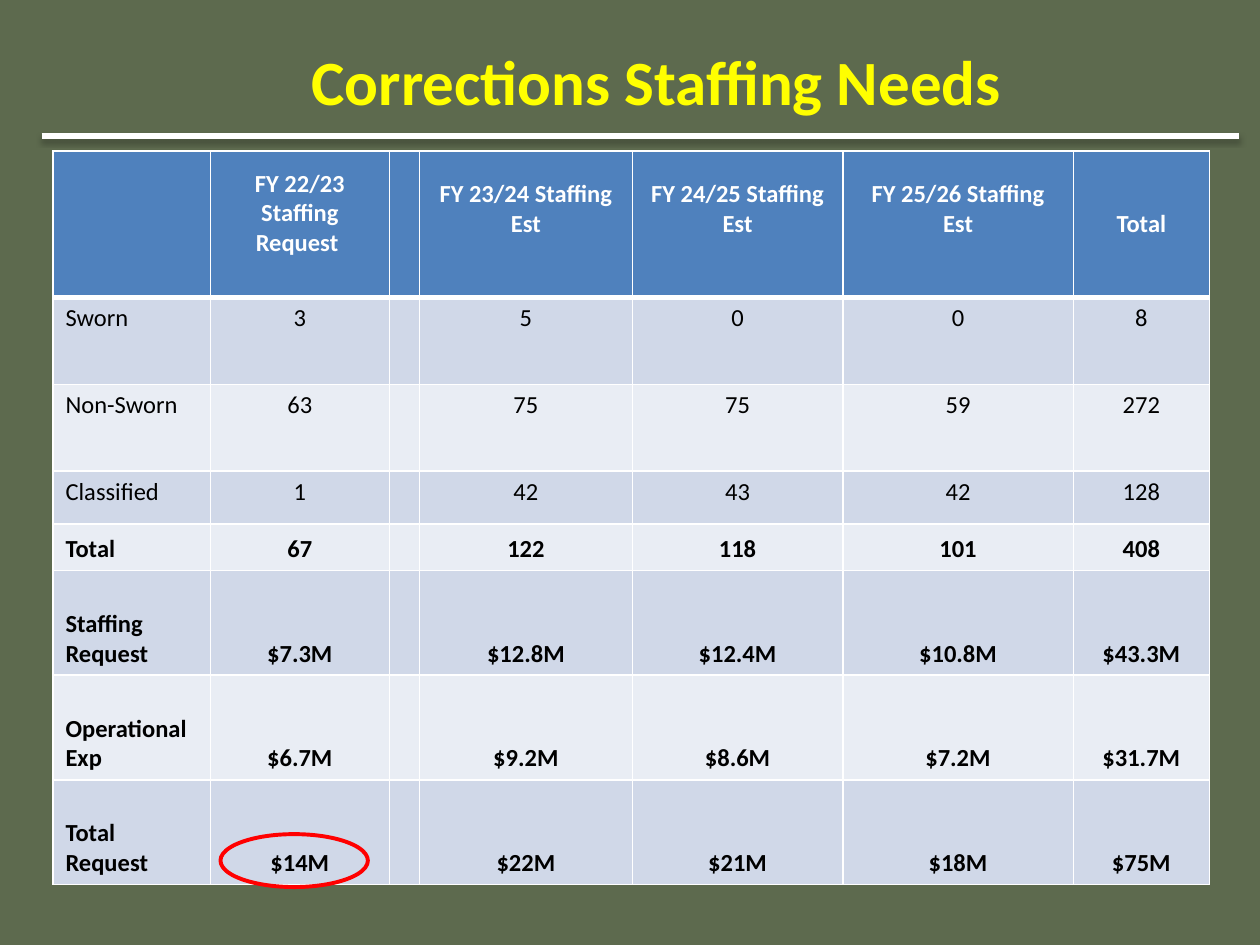
from dataclasses import dataclass

import lxml.etree
import pptx
import pptx.dml.color
import pptx.enum.shapes
import pptx.enum.text
import pptx.oxml.ns
import pptx.util

Inches = pptx.util.Inches
Pt = pptx.util.Pt
ALIGN = pptx.enum.text.PP_ALIGN
ANCHOR = pptx.enum.text.MSO_ANCHOR
qn = pptx.oxml.ns.qn

FONT = "Calibri"
COLORS = {
    "background": "5D6A4E",
    "title": "FFFF00",
    "white": "FFFFFF",
    "black": "000000",
    "header": "4F81BD",
    "odd": "D0D8E8",
    "even": "E9EDF4",
    "highlight": "FF0000",
}
COLUMN_WIDTHS = (1.25, 1.42, 0.23, 1.69, 1.67, 1.83, 1.08)


@dataclass
class StaffingRow:
    height: float
    values: tuple[str, ...]
    anchor: ANCHOR = ANCHOR.BOTTOM
    bold: bool = True


ROWS = (
    StaffingRow(1.16, ("", "FY 22/23 Staffing Request ", "", "FY 23/24 Staffing Est",
                       "FY 24/25 Staffing Est", "FY 25/26 Staffing Est", "Total"), ANCHOR.MIDDLE),
    StaffingRow(0.69, ("Sworn", "3", "", "5", "0", "0", "8"), ANCHOR.TOP, False),
    StaffingRow(0.69, ("Non-Sworn", "63", "", "75", "75", "59", "272"), ANCHOR.TOP, False),
    StaffingRow(0.42, ("Classified", "1", "", "42", "43", "42", "128"), ANCHOR.TOP, False),
    StaffingRow(0.37, ("Total", "67", "", "122", "118", "101", "408")),
    StaffingRow(0.83, ("Staffing Request", "$7.3M", "", "$12.8M", "$12.4M", "$10.8M", "$43.3M")),
    StaffingRow(0.83, ("Operational Exp", "$6.7M", "", "$9.2M", "$8.6M", "$7.2M", "$31.7M")),
    StaffingRow(0.83, ("Total Request", "$14M", "", "$22M", "$21M", "$18M", "$75M")),
)
HEADER_BOTTOM_MARGINS = {1: 0.22, 3: 0.29, 4: 0.29, 5: 0.29}


def rgb(name: str) -> pptx.dml.color.RGBColor:
    return pptx.dml.color.RGBColor.from_string(COLORS[name])


def add_text(para, text: str, size: float, color: str, bold: bool) -> None:
    span = para.add_run()
    span.text = text
    span.font.name = FONT
    span.font.size = Pt(size)
    span.font.bold = bold
    span.font.color.rgb = rgb(color)


def add_title(page, text: str) -> None:
    title = page.shapes.title
    title.left, title.top = Inches(0.67), Inches(0.32)
    title.width, title.height = Inches(9.08), Inches(0.63)
    frame = title.text_frame
    frame.vertical_anchor = ANCHOR.MIDDLE
    para = frame.paragraphs[0]
    para.alignment = ALIGN.CENTER
    add_text(para, text, 36, "title", True)


def add_rule(page) -> None:
    rule = page.shapes.add_connector(
        pptx.enum.shapes.MSO_CONNECTOR.STRAIGHT,
        Inches(0.33), Inches(1.08), Inches(9.83), Inches(1.08))
    rule.line.color.rgb = rgb("white")
    rule.line.width = Pt(3)
    effects = lxml.etree.SubElement(rule._element.spPr, qn("a:effectLst"))
    shadow = lxml.etree.SubElement(
        effects, qn("a:outerShdw"), blurRad=str(Pt(3.1)), dist=str(Pt(1.8)),
        dir="5400000", rotWithShape="0")
    shade = lxml.etree.SubElement(shadow, qn("a:srgbClr"), val=COLORS["black"])
    lxml.etree.SubElement(shade, qn("a:alpha"), val="35000")


def set_borders(cell, widths: dict[str, float]) -> None:
    properties = cell._tc.get_or_add_tcPr()
    for side, width in widths.items():
        border = lxml.etree.SubElement(properties, qn(f"a:ln{side}"), w=str(Pt(width)))
        fill = lxml.etree.SubElement(border, qn("a:solidFill"))
        lxml.etree.SubElement(fill, qn("a:srgbClr"), val=COLORS["white"])


def fill_cell(cell, row: StaffingRow, row_index: int, column_index: int) -> None:
    header = row_index == 0
    set_borders(cell, {"L": 1, "R": 1, "T": 3 if row_index == 1 else 1, "B": 3 if header else 1})
    cell.fill.solid()
    cell.fill.fore_color.rgb = rgb("header" if header else "odd" if row_index % 2 else "even")
    cell.vertical_anchor = row.anchor
    if header:
        cell.margin_bottom = Inches(HEADER_BOTTOM_MARGINS.get(column_index, 0.05))
    para = cell.text_frame.paragraphs[0]
    para.alignment = ALIGN.CENTER if header or column_index else ALIGN.LEFT
    text = row.values[column_index]
    if text:
        add_text(para, text, 14, "white" if header else "black", row.bold)
    else:
        lxml.etree.SubElement(para._p, qn("a:endParaRPr"), sz="1400")


def add_staffing_table(page) -> None:
    table = page.shapes.add_table(
        len(ROWS), len(COLUMN_WIDTHS), Inches(0.42), Inches(1.2),
        Inches(sum(COLUMN_WIDTHS)), Inches(sum(row.height for row in ROWS))).table
    for column, width in zip(table.columns, COLUMN_WIDTHS):
        column.width = Inches(width)
    for row_index, row in enumerate(ROWS):
        table.rows[row_index].height = Inches(row.height)
        for column_index in range(len(COLUMN_WIDTHS)):
            fill_cell(table.cell(row_index, column_index), row, row_index, column_index)


def add_highlight(page) -> None:
    ring = page.shapes.add_shape(
        pptx.enum.shapes.MSO_SHAPE.OVAL, Inches(1.75), Inches(6.62), Inches(1.17), Inches(0.42))
    ring.shadow.inherit = False
    ring.fill.background()
    ring.line.color.rgb = rgb("highlight")
    ring.line.width = Pt(2.25)


def main() -> None:
    deck = pptx.Presentation()
    deck.slide_width, deck.slide_height = Inches(10), Inches(7.5)
    page = deck.slides.add_slide(deck.slide_layouts.get_by_name("Title Only"))
    page.background.fill.solid()
    page.background.fill.fore_color.rgb = rgb("background")
    add_rule(page)
    add_title(page, "Corrections Staffing Needs")
    add_staffing_table(page)
    add_highlight(page)
    deck.save("out.pptx")


if __name__ == "__main__":
    main()
